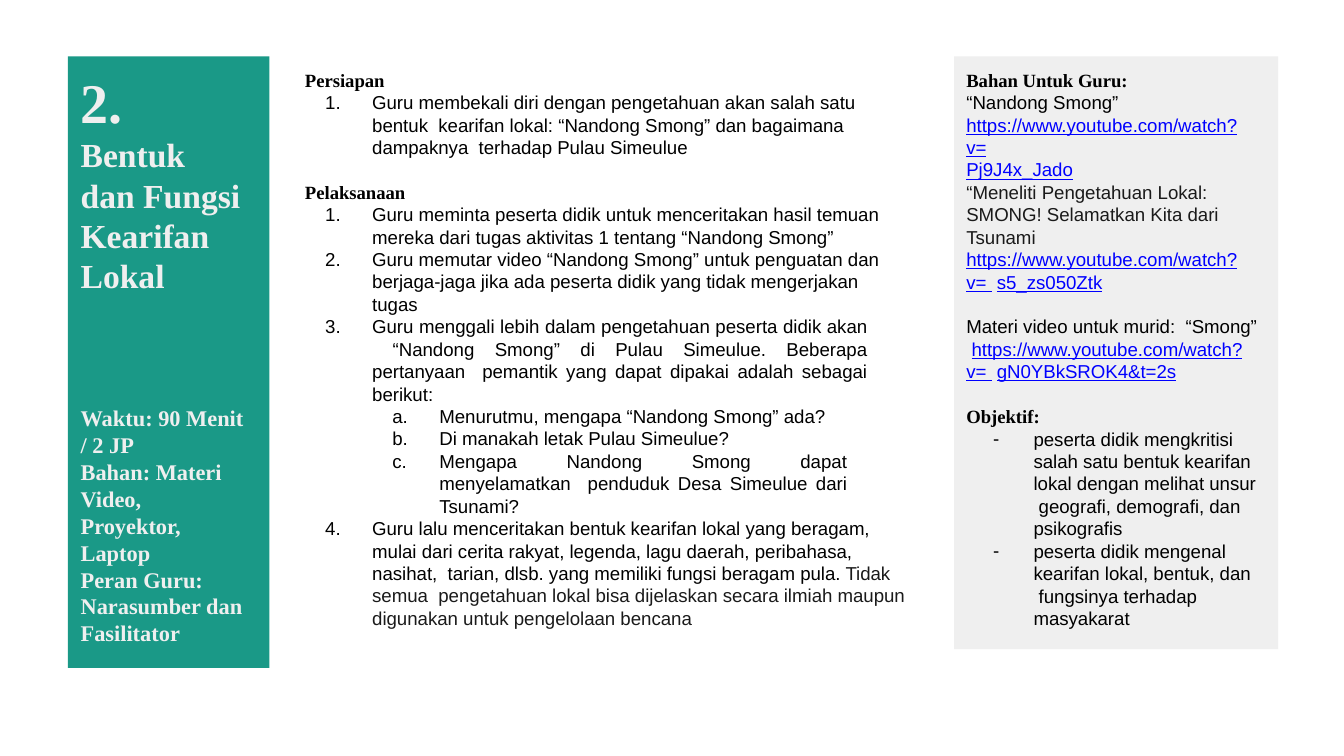
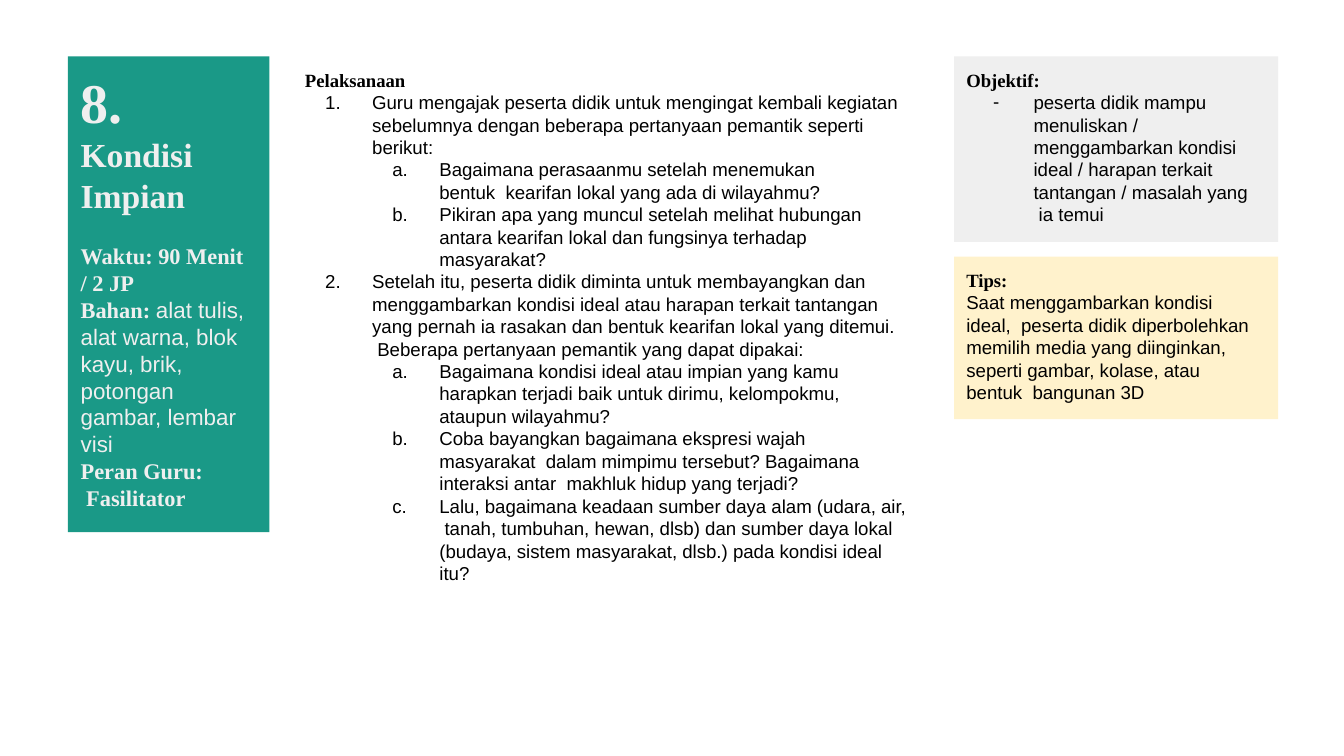
from lxml import etree
from pptx import Presentation
from pptx.dml.color import RGBColor
from pptx.enum.shapes import MSO_SHAPE
from pptx.enum.text import MSO_ANCHOR, MSO_AUTO_SIZE, PP_ALIGN
from pptx.oxml.ns import qn
from pptx.util import Inches, Pt

RECTANGLE = MSO_SHAPE.RECTANGLE
TOP = MSO_ANCHOR.TOP
NO_FIT = MSO_AUTO_SIZE.NONE
LEFT = PP_ALIGN.LEFT
JUSTIFY = PP_ALIGN.JUSTIFY

CELL = Inches(0.1)
GREEN, GREY, YELLOW = "1A9987", "EFEFEF", "FFF2CC"
SIDEBAR_LEFT, SIDEBAR_TOP, SIDEBAR_WIDTH = 5.05, 4.2, 15
PANEL_LEFT, PANEL_WIDTH = 71, 24.1
STEPS_LEFT, LIST_LEFT = 22.6, 24.1
LIST_SHIFT = (LIST_LEFT - STEPS_LEFT) / 10

LOOKS = {
    "number": ("Times New Roman", 30, True, GREY),
    "topic": ("Times New Roman", 18, True, GREY),
    "fact": ("Times New Roman", 12, True, GREY),
    "detail": ("Arial", 12, False, GREY),
    "head": ("Times New Roman", 10, True, "000000"),
    "body": ("Arial", 10, False, "000000"),
    "soft": ("Arial", 10, False, "1A1A1A"),
    "link": ("Arial", 10, False, "0000FF"),
}
LISTS = {
    "plain": (0, 0, 0, None, None),
    "heading": (0, 0.01, 0, None, None),
    "step": (0, 0.51, 0.35, "buAutoNum", {"type": "arabicPeriod"}),
    "second": (0, 0.51, 0.35, "buAutoNum", {"type": "arabicPeriod", "startAt": "2"}),
    "question": (1, 1.01, 0.35, "buAutoNum", {"type": "alphaLcPeriod"}),
    "dash": (0, 0.5, 0.3, "buChar", {"char": "-"}),
}


def color(value):
    return RGBColor.from_string(value)


def write(frame, paragraphs, shift=0, left=0, top=0.01):
    frame.word_wrap = True
    frame.auto_size = NO_FIT
    frame.vertical_anchor = TOP
    frame.margin_left, frame.margin_top = Inches(left), Inches(top)
    frame.margin_right = frame.margin_bottom = 0
    for index, (kind, right, before, align, runs) in enumerate(paragraphs):
        para = frame.add_paragraph() if index else frame.paragraphs[0]
        level, margin, hanging, bullet, settings = LISTS[kind]
        para.level = level
        properties = para._p.get_or_add_pPr()
        properties.set("marL", str(Inches(margin - shift)))
        properties.set("marR", str(Inches(right)))
        properties.set("indent", str(-Inches(hanging)))
        if bullet:
            tint = etree.SubElement(properties, qn("a:buClr"))
            etree.SubElement(tint, qn("a:srgbClr"), val="000000")
            etree.SubElement(properties, qn("a:buFont"), typeface="Arial")
            etree.SubElement(properties, qn(f"a:{bullet}"), settings)
        para.alignment = align
        para.line_spacing = 1.0
        para.space_before = Pt(before)
        for look, text in runs:
            span = para.add_run()
            span.text = text
            name, size, bold, tint = LOOKS[look]
            span.font.name, span.font.size, span.font.bold = name, Pt(size), bold
            span.font.color.rgb = color(tint)
            span.font.underline = look == "link"


pages = [
    {
        "number": "2.",
        "sidebar": 45.5,
        "notes": [
            (9.9, 12.9, 12.3, [
                ("plain", 0.03, 0, LEFT, [("topic", "Bentuk  dan Fungsi  Kearifan  Lokal")]),
            ]),
            (30, 13.2, 18.3, [
                ("plain", 0, 0, LEFT, [("fact", "Waktu: 90 Menit")]),
                ("plain", 0, 0, LEFT, [("fact", "/ 2 JP")]),
                ("plain", 0.2, 0, LEFT, [("fact", "Bahan: Materi  Video,  Proyektor,  Laptop")]),
                ("plain", 0, 0, LEFT, [("fact", "Peran Guru:  Narasumber dan  Fasilitator")]),
            ]),
        ],
        "steps": [
            (STEPS_LEFT, 5, 45.6, 10.3, 0, [
                ("heading", 0, 0, LEFT, [("head", "Persiapan")]),
                ("step", 0.3, 0, LEFT, [("body", "Guru membekali diri dengan pengetahuan akan salah satu bentuk  kearifan lokal: “Nandong Smong” dan bagaimana dampaknya  terhadap Pulau Simeulue")]),
                ("heading", 0, 12, LEFT, [("head", "Pelaksanaan")]),
            ]),
            (LIST_LEFT, 15, 44.3, 26.9, LIST_SHIFT, [
                ("step", 0.2, 0, LEFT, [("body", "Guru meminta peserta didik untuk menceritakan hasil temuan  mereka dari tugas aktivitas 1 tentang “Nandong Smong”")]),
                ("step", 0.2, 0, LEFT, [("body", "Guru memutar video “Nandong Smong” untuk penguatan dan  berjaga-jaga jika ada peserta didik yang tidak mengerjakan tugas")]),
                ("step", 0.39, 0, JUSTIFY, [("body", "Guru menggali lebih dalam pengetahuan peserta didik akan  “Nandong Smong” di Pulau Simeulue. Beberapa pertanyaan  pemantik yang dapat dipakai adalah sebagai berikut:")]),
                ("question", 0.54, 0, JUSTIFY, [("body", "Menurutmu, mengapa “Nandong Smong” ada?")]),
                ("question", 0.54, 0, JUSTIFY, [("body", "Di manakah letak Pulau Simeulue?")]),
                ("question", 0.54, 0, JUSTIFY, [("body", "Mengapa Nandong Smong dapat menyelamatkan  penduduk Desa Simeulue dari Tsunami?")]),
                ("step", 0.03, 0, LEFT, [
                    ("body", "Guru lalu menceritakan bentuk kearifan lokal yang beragam,  mulai dari cerita rakyat, legenda, lagu daerah, peribahasa, nasihat,  tarian, dlsb. yang memiliki fungsi beragam pula. "),
                    ("soft", "Tidak semua  pengetahuan lokal bisa dijelaskan secara ilmiah maupun  digunakan untuk pengelolaan bencana"),
                ]),
            ]),
        ],
        "panels": [
            (4.2, 44.1, GREY, [
                ("plain", 0, 0, LEFT, [("head", "Bahan Untuk Guru:")]),
                ("plain", 0.25, 0, LEFT, [("body", "“Nandong Smong”  "), ("link", "https://www.youtube.com/watch?v=")]),
                ("plain", 0, 0, LEFT, [("link", "Pj9J4x_Jado")]),
                ("plain", 0.25, 0, LEFT, [
                    ("soft", "“Meneliti Pengetahuan Lokal:  SMONG! Selamatkan Kita dari  Tsunami  "),
                    ("link", "https://www.youtube.com/watch?v= "),
                    ("soft", " "),
                    ("link", "s5_zs050Ztk"),
                ]),
                ("plain", 0.14, 12, LEFT, [
                    ("body", "Materi video untuk murid:  “Smong”  "),
                    ("link", "https://www.youtube.com/watch?v= "),
                    ("body", " "),
                    ("link", "gN0YBkSROK4&t=2s"),
                ]),
                ("plain", 0, 12, LEFT, [("head", "Objektif:")]),
                ("dash", 0.15, 0, LEFT, [("body", "peserta didik mengkritisi  salah satu bentuk kearifan  lokal dengan melihat unsur  geograﬁ, demograﬁ, dan  psikograﬁs")]),
                ("dash", 0.18, 0, LEFT, [("body", "peserta didik mengenal  kearifan lokal, bentuk, dan  fungsinya terhadap  masyakarat")]),
            ]),
        ],
    },
    {
        "number": "8.",
        "sidebar": 35.4,
        "notes": [
            (9.9, 13.2, 28.3, [
                ("plain", 0, 0, LEFT, [("topic", "Kondisi  Impian")]),
                ("plain", 0, 14.6, LEFT, [("fact", "Waktu: 90 Menit")]),
                ("plain", 0, 0, LEFT, [("fact", "/ 2 JP")]),
                ("plain", 0.05, 0, LEFT, [("fact", "Bahan: "), ("detail", "alat tulis,  alat warna, blok  kayu, brik,  potongan  gambar, lembar  visi")]),
                ("plain", 0.39, 0, LEFT, [("fact", "Peran Guru:  Fasilitator")]),
            ]),
        ],
        "steps": [
            (STEPS_LEFT, 5, 45.6, 13.6, 0, [
                ("heading", 0, 0, LEFT, [("head", "Pelaksanaan")]),
                ("step", 0, 0, LEFT, [("body", "Guru mengajak peserta didik untuk mengingat kembali kegiatan  sebelumnya dengan beberapa pertanyaan pemantik seperti  berikut:")]),
                ("question", 0.5, 0, LEFT, [("body", "Bagaimana perasaanmu setelah menemukan bentuk  kearifan lokal yang ada di wilayahmu?")]),
                ("question", 0.2, 0, LEFT, [("body", "Pikiran apa yang muncul setelah melihat hubungan  antara kearifan lokal dan fungsinya terhadap masyarakat?")]),
            ]),
            (LIST_LEFT, 20, 43.7, 21.9, LIST_SHIFT, [
                ("second", 0.1, 0, LEFT, [("body", "Setelah itu, peserta didik diminta untuk membayangkan dan  menggambarkan kondisi ideal atau harapan terkait tantangan  yang pernah ia rasakan dan bentuk kearifan lokal yang ditemui.  Beberapa pertanyaan pemantik yang dapat dipakai:")]),
                ("question", 0.2, 0, LEFT, [("body", "Bagaimana kondisi ideal atau impian yang kamu  harapkan terjadi baik untuk dirimu, kelompokmu,  ataupun wilayahmu?")]),
                ("question", 0.2, 0, LEFT, [("body", "Coba bayangkan bagaimana ekspresi wajah masyarakat  dalam mimpimu tersebut? Bagaimana interaksi antar  makhluk hidup yang terjadi?")]),
                ("question", 0.02, 0, LEFT, [("body", "Lalu, bagaimana keadaan sumber daya alam (udara, air,  tanah, tumbuhan, hewan, dlsb) dan sumber daya lokal  (budaya, sistem masyarakat, dlsb.) pada kondisi ideal itu?")]),
            ]),
        ],
        "panels": [
            (4.2, 13.8, GREY, [
                ("plain", 0, 0, LEFT, [("head", "Objektif:")]),
                ("dash", 0.2, 0, LEFT, [("body", "peserta didik mampu  menuliskan /  menggambarkan kondisi  ideal / harapan terkait  tantangan / masalah yang  ia temui")]),
            ]),
            (19.1, 12.1, YELLOW, [
                ("plain", 0, 0, LEFT, [("head", "Tips:")]),
                ("plain", 0.18, 0, LEFT, [("body", "Saat menggambarkan kondisi ideal,  peserta didik diperbolehkan  memilih media yang diinginkan,  seperti gambar, kolase, atau bentuk  bangunan 3D")]),
            ]),
        ],
    },
]

deck = Presentation()
deck.slide_width = 100 * CELL
deck.slide_height = deck.slide_width * 9 // 16
title_only = deck.slide_layouts[5]

for content in pages:
    page = deck.slides.add_slide(title_only)
    title = page.shapes.title
    title.left, title.top, title.width, title.height = [int(n * CELL) for n in (6, 4.9, 3.6, 5.3)]
    write(title.text_frame, [("plain", 0, 0, LEFT, [("number", content["number"])])])

    boxes = [(6, top, width, height, 0, paragraphs) for top, width, height, paragraphs in content["notes"]]
    for left, top, width, height, shift, paragraphs in boxes + content["steps"]:
        box = page.shapes.add_textbox(*[int(n * CELL) for n in (left, top, width, height)])
        write(box.text_frame, paragraphs, shift)

    blocks = [(SIDEBAR_LEFT, SIDEBAR_TOP, SIDEBAR_WIDTH, content["sidebar"], GREEN, [])]
    for top, height, fill, paragraphs in content["panels"]:
        blocks.append((PANEL_LEFT, top, PANEL_WIDTH, height, fill, paragraphs))
    for left, top, width, height, fill, paragraphs in blocks:
        block = page.shapes.add_shape(RECTANGLE, *[int(n * CELL) for n in (left, top, width, height)])
        block.shadow.inherit = False
        block.fill.solid()
        block.fill.fore_color.rgb = color(fill)
        block.line.fill.background()
        write(block.text_frame, paragraphs, left=0.09, top=0.09)
        if fill == GREEN:
            title._element.addprevious(block._element)

deck.save("out.pptx")
